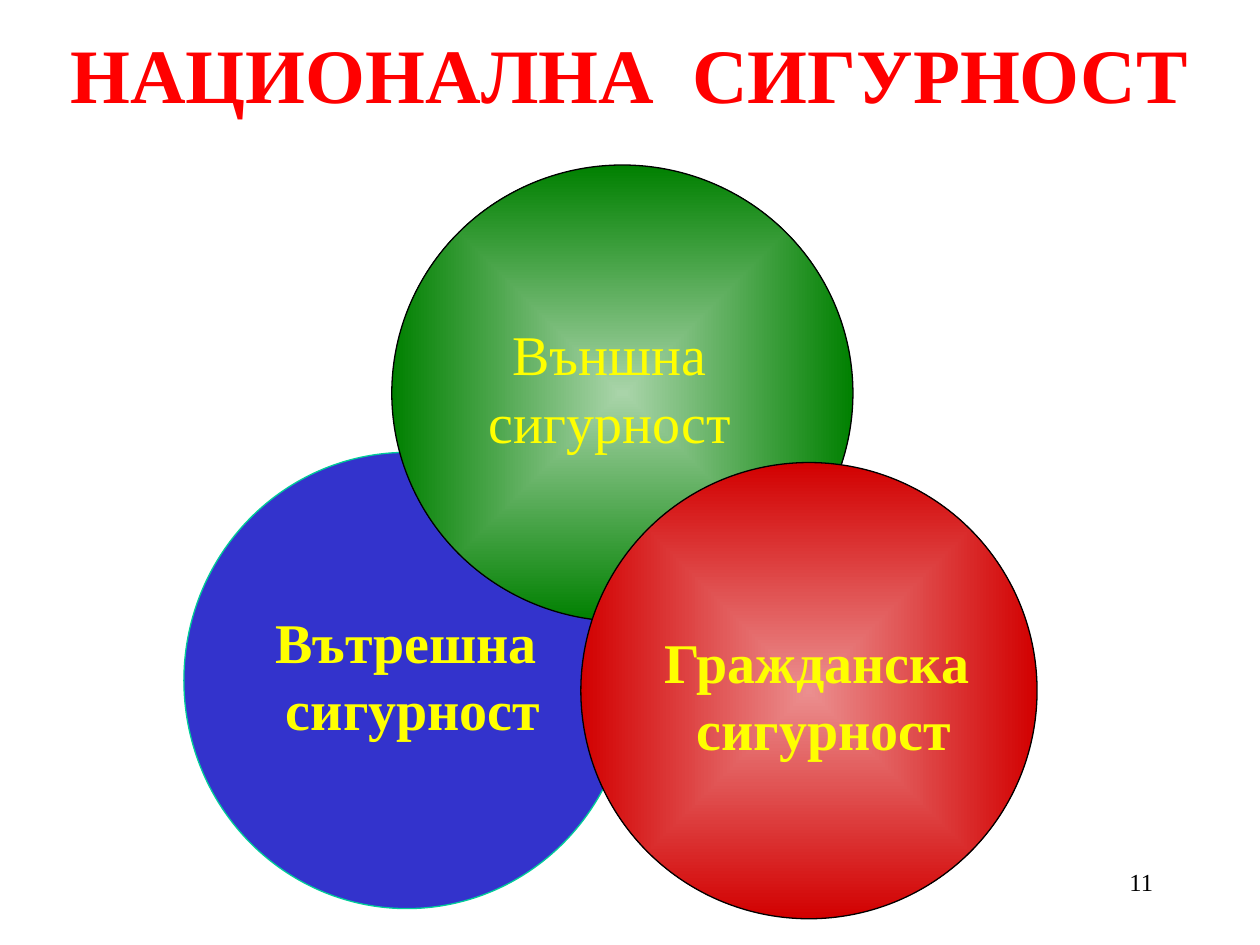
from dataclasses import dataclass

from lxml import etree
from pptx import Presentation
from pptx.dml.color import RGBColor
from pptx.enum.shapes import MSO_SHAPE
from pptx.enum.text import MSO_ANCHOR, MSO_AUTO_SIZE, PP_ALIGN
from pptx.oxml.ns import qn
from pptx.util import Pt

ELLIPSE = MSO_SHAPE.OVAL
CENTER, RIGHT = PP_ALIGN.CENTER, PP_ALIGN.RIGHT
TOP, MIDDLE = MSO_ANCHOR.TOP, MSO_ANCHOR.MIDDLE
NO_AUTOFIT = MSO_AUTO_SIZE.NONE
TITLE_ONLY = 5


@dataclass(frozen=True)
class Theme:
    font: str = "Times New Roman"
    title_size: int = 44
    label_size: int = 32
    number_size: int = 14
    title: str = "FF0000"
    label: str = "FFFF00"
    ink: str = "000000"
    internal: tuple = ("3333CC",)
    internal_edge: str = "00CC99"
    external: tuple = ("A9D4A9", "008000")  # centre, rim
    civil: tuple = ("EB8F8F", "D20000")


def write_text(frame, lines, *, font, size, color, bold=False, align=CENTER,
               anchor=TOP, wrap=True, inset=(7.2, 3.6)):
    """Fill a text frame with one paragraph per line."""
    frame.auto_size = NO_AUTOFIT
    frame.word_wrap = wrap
    frame.vertical_anchor = anchor
    frame.margin_left = frame.margin_right = Pt(inset[0])
    frame.margin_top = frame.margin_bottom = Pt(inset[1])
    for index, line in enumerate(lines):
        paragraph = frame.paragraphs[0] if index == 0 else frame.add_paragraph()
        paragraph.alignment = align
        run = paragraph.add_run()
        run.text = line
        run.font.name = font
        run.font.size = Pt(size)
        run.font.bold = bold
        run.font.color.rgb = RGBColor.from_string(color)


class SlideBuilder:
    def __init__(self, slide, theme):
        self.slide = slide
        self.theme = theme

    def title(self, text, left, top, width, height):
        heading = self.slide.shapes.title
        heading.left, heading.top = Pt(left), Pt(top)
        heading.width, heading.height = Pt(width), Pt(height)
        write_text(heading.text_frame, [text], font=self.theme.font,
                   size=self.theme.title_size, color=self.theme.title,
                   bold=True, anchor=MIDDLE)

    def circle(self, left, top, width, height, colors, edge):
        """One colour gives a plain fill, two a fill from centre to rim."""
        circle = self.slide.shapes.add_shape(
            ELLIPSE, Pt(left), Pt(top), Pt(width), Pt(height))
        circle.shadow.inherit = False
        circle.line.color.rgb = RGBColor.from_string(edge)
        circle.line.width = Pt(0.75)
        if len(colors) == 1:
            circle.fill.solid()
            circle.fill.fore_color.rgb = RGBColor.from_string(colors[0])
            return
        circle.fill.gradient()
        for stop, color, position in zip(circle.fill.gradient_stops, colors, (0, 1)):
            stop.color.rgb = RGBColor.from_string(color)
            stop.position = position
        # Swap the linear direction for a path from the centre
        gradient = circle.fill._xPr.find(qn("a:gradFill"))
        linear = gradient.find(qn("a:lin"))
        radial = etree.Element(qn("a:path"), path="shape")
        etree.SubElement(radial, qn("a:fillToRect"),
                         l="50000", t="50000", r="50000", b="50000")
        gradient.replace(linear, radial)

    def text(self, lines, left, top, width, height, **text_format):
        box = self.slide.shapes.add_textbox(Pt(left), Pt(top), Pt(width), Pt(height))
        write_text(box.text_frame, lines, font=self.theme.font, **text_format)

    def label(self, lines, left, top, width, height, bold=True):
        self.text(lines, left, top, width, height, size=self.theme.label_size,
                  color=self.theme.label, bold=bold, wrap=False, inset=(3.6, 3.6))


def main():
    deck = Presentation()
    deck.slide_width, deck.slide_height = Pt(720), Pt(540)
    theme = Theme()
    page = SlideBuilder(deck.slides.add_slide(deck.slide_layouts[TITLE_ONLY]), theme)

    # Heading
    page.title("НАЦИОНАЛНА  СИГУРНОСТ", 0, 5.8, 720, 71.3)

    # Overlapping circles, back to front
    diameter = 260.7
    page.circle(105.1, 258.5, 254.9, diameter, theme.internal, theme.internal_edge)
    page.circle(223.9, 94.3, 263.5, diameter, theme.external, theme.ink)
    page.circle(331.9, 264.3, diameter, diameter, theme.civil, theme.ink)

    # Circle labels
    page.label(["Гражданска ", "сигурност"], 371.5, 355, 198.7, 67.7)
    page.label(["Вътрешна", " сигурност"], 155.5, 343.4, 153.4, 62.6)
    page.label(["Външна", "сигурност"], 269.3, 179.3, 158.4, 46.8, bold=False)

    # Slide number
    page.text(["11"], 516.2, 491.8, 149.8, 36, size=theme.number_size,
              color=theme.ink, align=RIGHT)

    deck.save("out.pptx")


if __name__ == "__main__":
    main()
